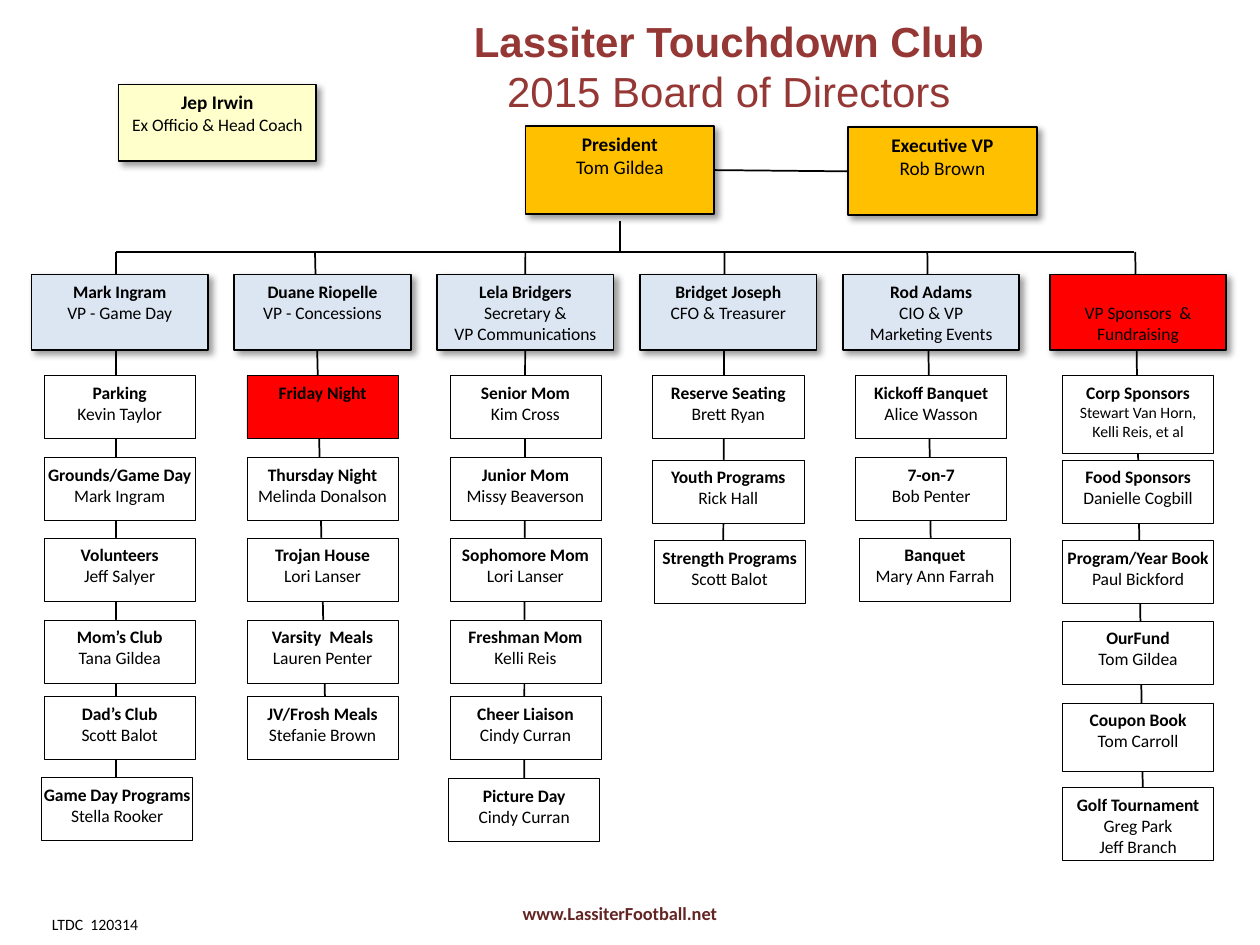
from dataclasses import dataclass

import lxml.etree
import pptx
import pptx.dml.color
import pptx.enum.shapes
import pptx.enum.text
import pptx.oxml.ns
import pptx.util

RGB = pptx.dml.color.RGBColor
BLACK = RGB(0x00, 0x00, 0x00)
WHITE = RGB(0xFF, 0xFF, 0xFF)
RED = RGB(0xFF, 0x00, 0x00)
GOLD = RGB(0xFF, 0xC0, 0x00)
CREAM = RGB(0xFF, 0xFF, 0xCC)
PALE_BLUE = RGB(0xDC, 0xE6, 0xF2)
BRICK = RGB(0x95, 0x37, 0x35)
MAROON = RGB(0x63, 0x25, 0x23)

Inches = pptx.util.Inches
Pt = pptx.util.Pt
qn = pptx.oxml.ns.qn
CENTER = pptx.enum.text.PP_ALIGN.CENTER
ANCHOR = pptx.enum.text.MSO_ANCHOR

# The chart's grid, in inches
GRID_LEFT, COLUMN_PITCH = 0.25, 1.61
BUS_Y, OFFICER_TOP = 2.0, 2.18
OFFICER_WIDTH, OFFICER_HEIGHT = 1.4, 0.6
ROLE_INSET, ROLE_WIDTH, ROLE_HEIGHT = 0.1, 1.2, 0.5
ROW_TOPS = (2.98, 3.63, 4.27, 4.92, 5.53, 6.17)
TEXT_INSET, LINE_HEIGHT = 0.05, 0.17


@dataclass
class Card:
    """A box of centred lines, the first one bold if it is a heading."""
    lines: tuple[str, ...]
    fill: RGB = WHITE
    heading_size: float = 10
    body_size: float = 10
    has_heading: bool = True
    raised: bool = False


@dataclass
class Role:
    """A card in a column, nudged from its grid cell."""
    card: Card
    dx: float = 0
    dy: float = 0
    height: float = ROLE_HEIGHT


@dataclass
class Branch:
    """An officer and the roles below; the spine runs from the bus line to its foot."""
    column: float
    officer: Card
    spine_top_x: float
    spine_foot: tuple[float, float]
    roles: list[Role]


def officer(*lines: str, fill: RGB = PALE_BLUE, has_heading: bool = True) -> Card:
    return Card(lines, fill, has_heading=has_heading, raised=True)


def role(*lines: str, fill: RGB = WHITE, body_size: float = 10, **placing: float) -> Role:
    return Role(Card(lines, fill, body_size=body_size), **placing)


BRANCHES = [
    Branch(0, officer("Mark Ingram", "VP - Game Day"), 0.92, (0.92, 6.17), [
        role("Parking", "Kevin Taylor"),
        role("Grounds/Game Day", "Mark Ingram"),
        role("Volunteers", "Jeff Salyer"),
        role("Mom’s Club", "Tana Gildea"),
        role("Dad’s Club", "Scott Balot"),
        role("Game Day Programs", "Stella Rooker", dx=-0.02)]),
    Branch(1, officer("Duane Riopelle", "VP - Concessions"), 2.5, (2.58, 5.58), [
        role("Friday Night", fill=RED),
        role("Thursday Night", "Melinda Donalson"),
        role("Trojan House", "Lori Lanser"),
        role("Varsity  Meals", "Lauren Penter"),
        role("JV/Frosh Meals", "Stefanie Brown")]),
    Branch(2, officer("Lela Bridgers", "Secretary &", "VP Communications"), 4.17, (4.16, 6.25), [
        role("Senior Mom", "Kim Cross"),
        role("Junior Mom", "Missy Beaverson"),
        role("Sophomore Mom", "Lori Lanser"),
        role("Freshman Mom", "Kelli Reis"),
        role("Cheer Liaison", "Cindy Curran"),
        role("Picture Day", "Cindy Curran", dx=-0.01, dy=0.01)]),
    Branch(3, officer("Bridget Joseph", "CFO & Treasurer"), 5.75, (5.74, 4.5), [
        role("Reserve Seating", "Brett Ryan"),
        role("Youth Programs", "Rick Hall", dy=0.02),
        role("Strength Programs", "Scott Balot", dx=0.01, dy=0.02)]),
    Branch(4, officer("Rod Adams", "CIO & VP", "Marketing Events"), 7.36, (7.39, 4.58), [
        role("Kickoff Banquet", "Alice Wasson"),
        role("7-on-7", "Bob Penter"),
        role("Banquet", "Mary Ann Farrah", dx=0.03)]),
    Branch(5.02, officer("VP Sponsors  &", "Fundraising", fill=RED, has_heading=False),
           9.01, (9.07, 6.27), [
        role("Corp Sponsors", "Stewart Van Horn,", "Kelli Reis, et al", body_size=9, height=0.62),
        role("Food Sponsors", "Danielle Cogbill", dy=0.02),
        role("Program/Year Book", "Paul Bickford", dy=0.02),
        role("OurFund", "Tom Gildea", dy=0.01),
        role("Coupon Book", "Tom Carroll", dy=0.05, height=0.54),
        role("Golf Tournament", "Greg Park", "Jeff Branch", dy=0.08, height=0.58)]),
]


def write_line(paragraph, text: str, size: float, color: RGB, bold: bool, font: str = "Calibri") -> None:
    paragraph.text = text
    paragraph.alignment = CENTER
    paragraph.font.name = font
    paragraph.font.size = Pt(size)
    paragraph.font.bold = bold
    paragraph.font.color.rgb = color


def cast_shadow(shape) -> None:
    effects = shape._element.spPr.find(qn("a:effectLst"))
    shadow = lxml.etree.SubElement(effects, qn("a:outerShdw"), blurRad=str(Pt(4)), dist=str(Pt(3)),
                                   dir=str(45 * 60000), algn="tl", rotWithShape="0")
    color = lxml.etree.SubElement(shadow, qn("a:srgbClr"), val=str(BLACK))
    lxml.etree.SubElement(color, qn("a:alpha"), val="40000")


def draw_card(slide, card: Card, left: float, top: float, width: float, height: float) -> None:
    box = slide.shapes.add_shape(pptx.enum.shapes.MSO_SHAPE.RECTANGLE, Inches(left), Inches(top),
                                 Inches(width), Inches(height))
    box.fill.solid()
    box.fill.fore_color.rgb = card.fill
    box.line.color.rgb = BLACK
    box.line.width = Pt(1 if card.raised else 0.25)
    box.shadow.inherit = False
    if card.raised:
        cast_shadow(box)
    frame = box.text_frame
    frame.word_wrap = False
    frame.vertical_anchor = ANCHOR.TOP
    # A card without a heading leaves the heading's line free
    frame.margin_top = Inches(TEXT_INSET + (0 if card.has_heading else LINE_HEIGHT))
    for index, text in enumerate(card.lines):
        paragraph = frame.add_paragraph() if index else frame.paragraphs[0]
        heading = card.has_heading and index == 0
        write_line(paragraph, text, card.heading_size if heading else card.body_size, BLACK, heading)


def draw_line(slide, start: tuple[float, float], end: tuple[float, float]) -> None:
    line = slide.shapes.add_connector(pptx.enum.shapes.MSO_CONNECTOR.STRAIGHT,
                                      *(Inches(length) for length in (*start, *end)))
    line.line.color.rgb = BLACK
    line.line.width = Pt(1)
    lxml.etree.SubElement(line._element.spPr, qn("a:effectLst"))


def draw_branch(slide, branch: Branch) -> None:
    left = GRID_LEFT + branch.column * COLUMN_PITCH
    draw_line(slide, (branch.spine_top_x, BUS_Y), branch.spine_foot)
    draw_card(slide, branch.officer, left, OFFICER_TOP, OFFICER_WIDTH, OFFICER_HEIGHT)
    for row_top, post in zip(ROW_TOPS, branch.roles):
        draw_card(slide, post.card, left + ROLE_INSET + post.dx, row_top + post.dy,
                  ROLE_WIDTH, post.height)


def draw_title(slide) -> None:
    title = slide.shapes.title
    title.left, title.top, title.width, title.height = map(Inches, (2.45, 0.07, 6.67, 0.91))
    frame = title.text_frame
    frame.auto_size = pptx.enum.text.MSO_AUTO_SIZE.NONE
    frame.vertical_anchor = ANCHOR.TOP
    write_line(frame.paragraphs[0], "Lassiter Touchdown Club", 24, BRICK, True, "Arial")
    write_line(frame.add_paragraph(), "2015 Board of Directors", 24, BRICK, False, "Arial")


def draw_footer(slide, text: str, left: float, top: float, width: float,
                size: float, color: RGB, bold: bool) -> None:
    frame = slide.shapes.add_textbox(Inches(left), Inches(top), Inches(width), Inches(0.33)).text_frame
    frame.word_wrap = True
    frame.vertical_anchor = ANCHOR.MIDDLE
    write_line(frame.paragraphs[0], text, size, color, bold)


def main() -> None:
    deck = pptx.Presentation()
    deck.slide_width, deck.slide_height = Inches(10), Inches(7.5)
    slide = deck.slides.add_slide(deck.slide_layouts[5])
    draw_title(slide)

    draw_line(slide, (4.92, 1.75), (4.92, BUS_Y))
    draw_line(slide, (0.92, BUS_Y), (9, BUS_Y))
    draw_line(slide, (6.73, 1.36), (5.67, 1.35))
    for branch in BRANCHES:
        draw_branch(slide, branch)

    coach = Card(("Jep Irwin", "Ex Officio & Head Coach"), CREAM, heading_size=11, raised=True)
    draw_card(slide, coach, 0.94, 0.67, 1.57, 0.61)
    for lines, left, top in ((("President", "Tom Gildea"), 4.17, 1),
                             (("Executive VP", "Rob Brown"), 6.73, 1.01)):
        draw_card(slide, Card(lines, GOLD, 11, 11, raised=True), left, top, 1.5, 0.7)

    draw_footer(slide, "www.LassiterFootball.net", 3.92, 7.08, 2, 10.5, MAROON, True)
    draw_footer(slide, "LTDC  120314", 0.17, 7.17, 1.17, 9, BLACK, False)
    deck.save("out.pptx")


if __name__ == "__main__":
    main()
